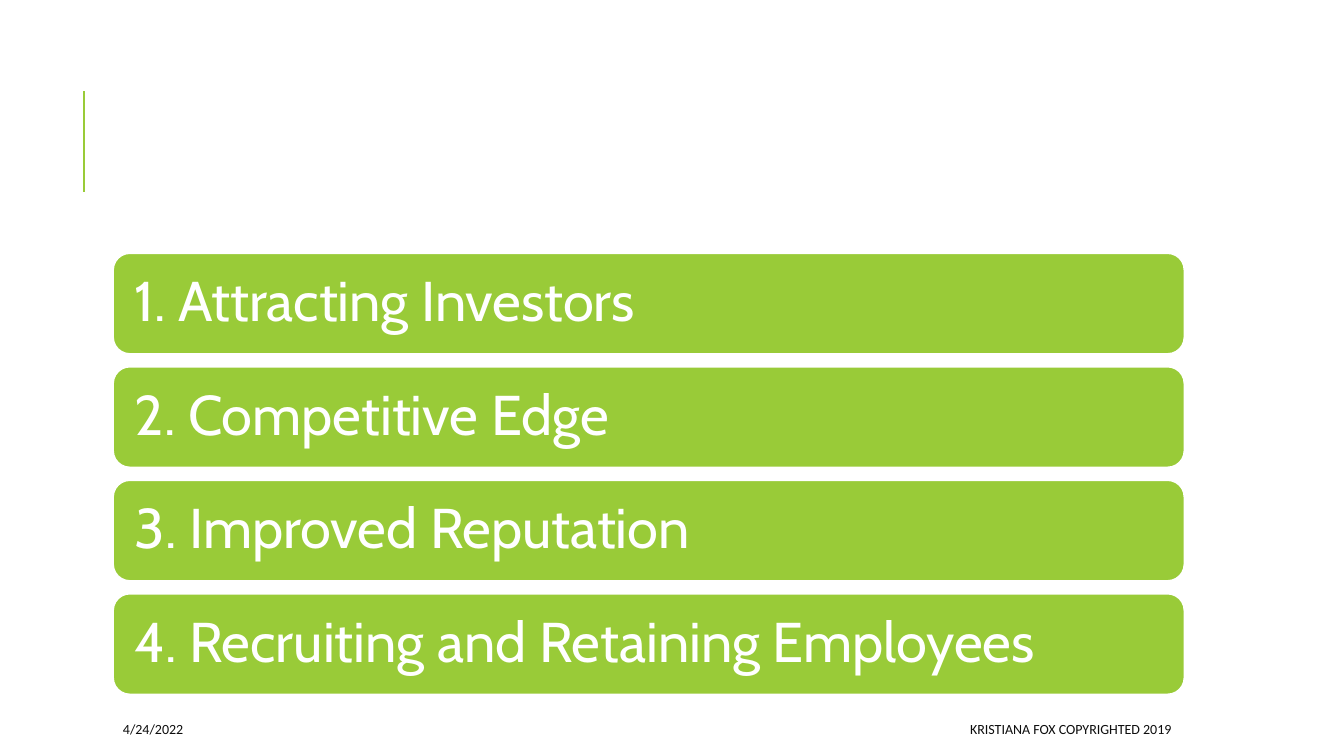
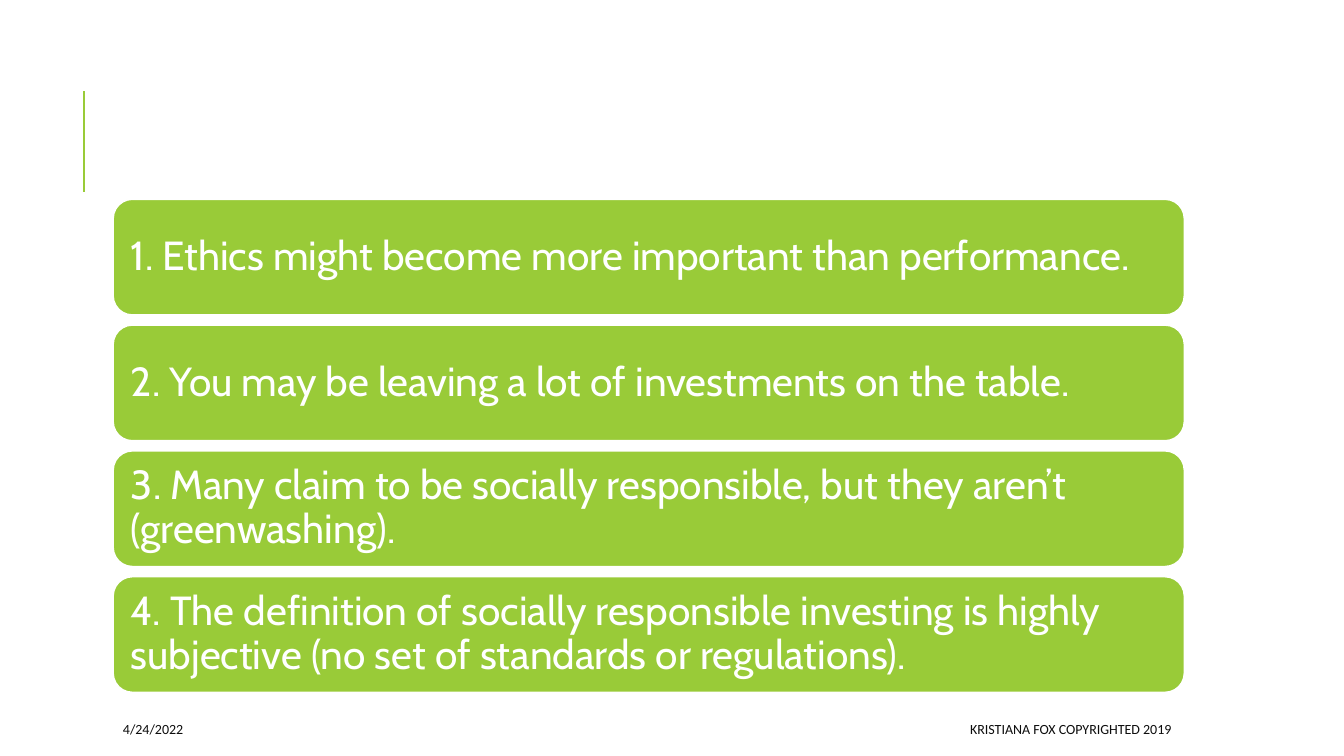
from dataclasses import dataclass

import pptx
import pptx.dml.color
import pptx.enum.shapes
import pptx.enum.text
import pptx.oxml.ns
import pptx.util
from lxml import etree

Cm, Pt = pptx.util.Cm, pptx.util.Pt
RGB = pptx.dml.color.RGBColor
ALIGN = pptx.enum.text.PP_ALIGN
SHAPE = pptx.enum.shapes.MSO_SHAPE

# Content: list text size, top, bar height and gap (cm), items
SLIDES = [
    dict(size=40, top=6.38, height=2.54, gap=0.32, items=[
        "1. Attracting Investors",
        "2. Competitive Edge",
        "3. Improved Reputation",
        "4. Recruiting and Retaining Employees",
    ]),
    dict(size=29, top=5.02, height=2.92, gap=0.25, items=[
        "1. Ethics might become more important than performance.",
        "2. You may be leaving a lot of investments on the table.",
        "3. Many claim to be socially responsible, but they aren’t (greenwashing).",
        "4. The definition of socially responsible investing is highly "
        "subjective (no set of standards or regulations).",
    ]),
]
DATE = "4/24/2022"
FOOTER = "KRISTIANA FOX COPYRIGHTED 2019 "


@dataclass(frozen=True)
class Theme:
    green: RGB = RGB(0x99, 0xCB, 0x38)
    white: RGB = RGB(0xFF, 0xFF, 0xFF)
    dark: RGB = RGB(0x0D, 0x0D, 0x0D)
    list_font: str = "Cabin"
    footer_font: str = "Calibri"
    footer_size: int = 10


THEME = Theme()
LEFT, WIDTH = 2.85, 27.0  # content column, cm
INSET_RATIO = 0.3  # bar inset as a share of its type size


def write(sp, text, *, font, size, color, align=ALIGN.LEFT, inset=None, spacing=None):
    tf = sp.text_frame
    tf.word_wrap = True
    tf.vertical_anchor = pptx.enum.text.MSO_ANCHOR.MIDDLE
    if inset is not None:
        tf.margin_left = tf.margin_right = tf.margin_top = tf.margin_bottom = inset
    p = tf.paragraphs[0]
    p.alignment = align
    p.line_spacing = spacing
    r = p.add_run()
    r.text = text
    r.font.name, r.font.size, r.font.color.rgb = font, Pt(size), color


def add_title_rule(slide):
    """Draw the rule beside the title area and move it to the shared layout."""
    sp = slide.shapes.add_connector(
        pptx.enum.shapes.MSO_CONNECTOR.STRAIGHT, Cm(2.12), Cm(4.83), Cm(2.12), Cm(2.29))
    sp.line.color.rgb = THEME.green
    sp.line.width = Pt(1.5)
    etree.SubElement(sp.element.spPr, pptx.oxml.ns.qn("a:effectLst"))
    slide.slide_layout.shapes.element.append(sp.element)


def add_bars(slide, size, top, height, gap, items):
    for i, text in enumerate(items):
        y = top + i * (height + gap)
        sp = slide.shapes.add_shape(
            SHAPE.ROUNDED_RECTANGLE, Cm(LEFT), Cm(y), Cm(WIDTH), Cm(height))
        sp.shadow.inherit = False
        sp.fill.solid()
        sp.fill.fore_color.rgb = THEME.green
        sp.line.color.rgb = THEME.white
        sp.line.width = Pt(1.25)
        write(sp, text, font=THEME.list_font, size=size, color=THEME.white,
              inset=Pt(size * INSET_RATIO), spacing=0.9)


def add_footer(slide):
    right = LEFT + WIDTH
    for text, width, x, align in [
        (DATE, 6.0, LEFT, ALIGN.LEFT),
        (FOOTER, 16.4, right - 16.4, ALIGN.RIGHT),
    ]:
        sp = slide.shapes.add_textbox(Cm(x), Cm(17.98), Cm(width), Cm(0.76))
        write(sp, text, font=THEME.footer_font, size=THEME.footer_size,
              color=THEME.dark, align=align)


def main():
    prs = pptx.Presentation()
    prs.slide_width, prs.slide_height = Cm(33.87), Cm(19.05)
    layout = prs.slide_layouts.get_by_name("Blank")
    for i, content in enumerate(SLIDES):
        slide = prs.slides.add_slide(layout)
        if i == 0:
            add_title_rule(slide)
        add_bars(slide, **content)
        add_footer(slide)
    prs.save("out.pptx")


if __name__ == "__main__":
    main()
